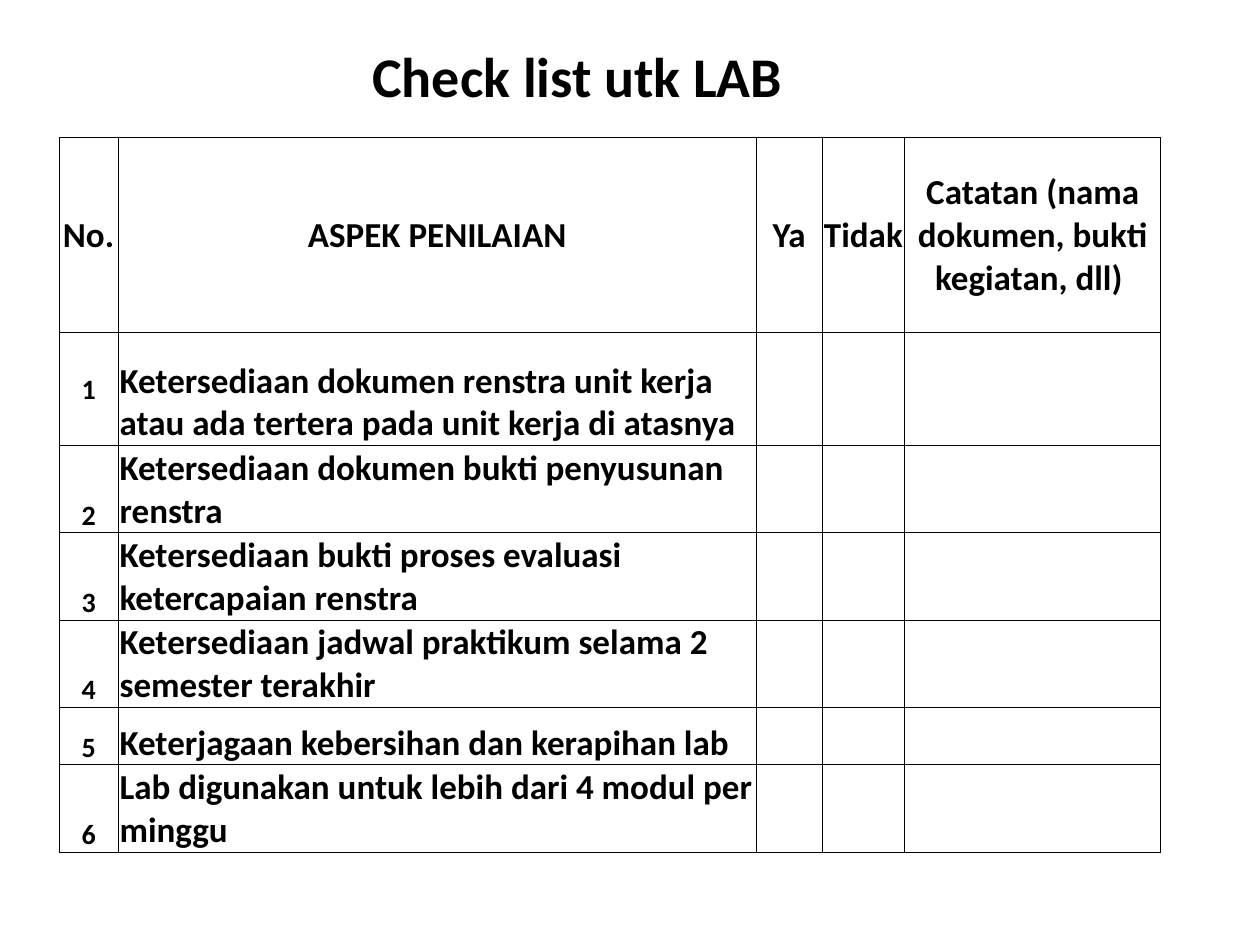
"""Build the laboratory checklist slide."""
from dataclasses import dataclass

from lxml import etree
from pptx import Presentation
from pptx import util as u
from pptx.dml.color import RGBColor
from pptx.enum import text
from pptx.oxml.ns import qn

COLORS = {"ink": "000000", "border": "000000"}
FONT = "Calibri"
COLUMN_WIDTHS = (1.19, 12.87, 1.32, 1.67, 5.16)
HEADER_HEIGHT = 3.94
HEADERS = ("No. ", "ASPEK PENILAIAN", "Ya", "Tidak",
           "Catatan (nama dokumen, bukti kegiatan, dll) ")
CENTER, LEFT = text.PP_ALIGN.CENTER, text.PP_ALIGN.LEFT
MIDDLE, BOTTOM = text.MSO_ANCHOR.MIDDLE, text.MSO_ANCHOR.BOTTOM


@dataclass
class Aspect:
    wording: str
    height: float = 1.16
    number_anchor: text.MSO_ANCHOR = BOTTOM


ASPECTS = (
    Aspect("Ketersediaan dokumen renstra unit kerja atau ada tertera "
           "pada unit kerja di atasnya", 2.27, MIDDLE),
    Aspect("Ketersediaan dokumen bukti penyusunan renstra"),
    Aspect("Ketersediaan bukti proses evaluasi ketercapaian renstra"),
    Aspect("Ketersediaan jadwal praktikum selama 2 semester terakhir"),
    Aspect("Keterjagaan kebersihan dan kerapihan lab"),
    Aspect("Lab digunakan untuk lebih dari 4 modul per minggu"),
)


def style_paragraph(para, size: int, align) -> None:
    para.alignment = align
    para.font.name = FONT
    para.font.size = u.Pt(size)
    para.font.bold = True
    para.font.color.rgb = RGBColor.from_string(COLORS["ink"])


def outline_cell(cell) -> None:
    properties = cell._tc.get_or_add_tcPr()
    for side in ("a:lnL", "a:lnR", "a:lnT", "a:lnB"):
        line = etree.SubElement(properties, qn(side), w=str(u.Pt(0.5)))
        fill = etree.SubElement(line, qn("a:solidFill"))
        etree.SubElement(fill, qn("a:srgbClr"), val=COLORS["border"])
    cell.fill.background()


def write_cell(cell, wording: str, size: int, align, anchor) -> None:
    cell.margin_left = cell.margin_right = cell.margin_top = u.Cm(0.03)
    cell.margin_bottom = 0
    cell.vertical_anchor = anchor
    cell.text = wording
    style_paragraph(cell.text_frame.paragraphs[0], size, align)


def add_title(slide, wording: str) -> None:
    title = slide.shapes.title
    title.left, title.top = u.Cm(1.27), u.Cm(0.41)
    title.width, title.height = u.Cm(20.75), u.Cm(2.21)
    title.text_frame.text = wording
    title.text_frame.vertical_anchor = MIDDLE
    style_paragraph(title.text_frame.paragraphs[0], 32, CENTER)


def add_checklist(slide) -> None:
    heights = [HEADER_HEIGHT] + [aspect.height for aspect in ASPECTS]
    frame = slide.shapes.add_table(
        len(heights), len(COLUMN_WIDTHS), u.Cm(1.19), u.Cm(2.77),
        u.Cm(sum(COLUMN_WIDTHS)), u.Cm(sum(heights)))
    table = frame.table
    table.first_row = table.horz_banding = False
    for column, width in zip(table.columns, COLUMN_WIDTHS):
        column.width = u.Cm(width)
    for row, height in zip(table.rows, heights):
        row.height = u.Cm(height)
    for cell in table.iter_cells():
        outline_cell(cell)
    for index, header in enumerate(HEADERS):
        write_cell(table.cell(0, index), header, 20, CENTER, MIDDLE)
    for number, aspect in enumerate(ASPECTS, start=1):
        write_cell(table.cell(number, 0), str(number), 16, CENTER,
                   aspect.number_anchor)
        write_cell(table.cell(number, 1), aspect.wording, 20, LEFT, BOTTOM)


def main() -> None:
    deck = Presentation()
    deck.slide_width, deck.slide_height = u.Cm(25.4), u.Cm(19.05)
    page = deck.slides.add_slide(deck.slide_layouts[5])
    add_title(page, "Check list utk LAB")
    add_checklist(page)
    deck.save("out.pptx")


if __name__ == "__main__":
    main()
